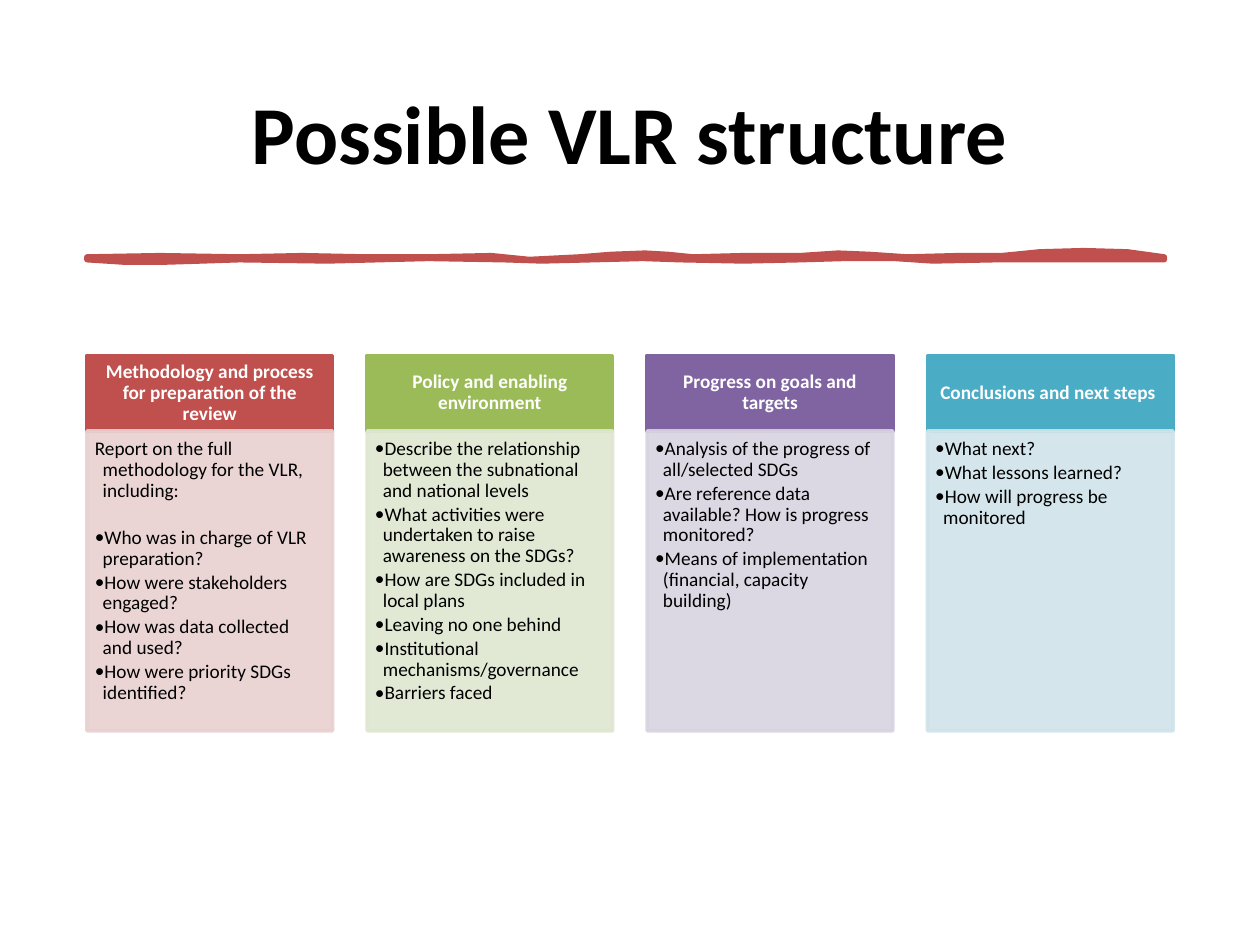
from dataclasses import dataclass

from lxml.etree import SubElement
from pptx import Presentation
from pptx.dml.color import RGBColor
from pptx.enum.shapes import MSO_SHAPE
from pptx.enum.text import MSO_ANCHOR, PP_ALIGN
from pptx.oxml.ns import qn
from pptx.util import Inches, Pt


@dataclass(frozen=True)
class Theme:
    font: str = "Calibri"
    title: int = 47
    text: int = 11
    black: str = "000000"
    white: str = "FFFFFF"
    red: str = "C0504D"
    green: str = "9BBB59"
    violet: str = "8064A2"
    blue: str = "4BACC6"
    pale_red: str = "E8D0D0"
    pale_green: str = "DEE7D1"
    pale_violet: str = "D8D3E0"
    pale_blue: str = "D0E3EA"


theme = Theme()


def paint(shape, color, width, alpha=100):
    """Give fill and line one colour, with alpha as percent opacity."""
    shape.shadow.inherit = False
    shape.fill.solid()
    shape.fill.fore_color.rgb = RGBColor.from_string(color)
    shape.line.color.rgb = RGBColor.from_string(color)
    shape.line.width = Pt(width)
    if alpha < 100:
        for tint in shape._element.spPr.iter(qn("a:srgbClr")):
            SubElement(tint, qn("a:alpha"), val=str(alpha * 1000))


def write(shape, lines, size=theme.text, color=theme.black, bold=False,
          align=PP_ALIGN.CENTER, anchor=MSO_ANCHOR.MIDDLE,
          inset=(0.09, 0.05, 0.09, 0.05), after=0, hang=0, bullets=False):
    """Fill a shape with paragraphs; a line ending in a colon is a lead-in."""
    frame = shape.text_frame
    frame.word_wrap = True
    frame.vertical_anchor = anchor
    (frame.margin_left, frame.margin_top,
     frame.margin_right, frame.margin_bottom) = map(Inches, inset)
    for i, line in enumerate(lines):
        para = frame.paragraphs[0] if i == 0 else frame.add_paragraph()
        lead = line.endswith(":")
        para.alignment = align
        para.line_spacing = 0.9
        para.space_after = Pt(15.2 if lead else after)
        props = para._p.get_or_add_pPr()
        if hang:
            para.level = 1
            props.set("marL", str(Inches(hang)))
            props.set("indent", str(-Inches(hang)))
        if bullets and not lead:
            SubElement(props, qn("a:buFont"), typeface=theme.font)
            SubElement(props, qn("a:buChar"), char="•")
        run = para.add_run()
        run.text = line
        run.font.name = theme.font
        run.font.size = Pt(size)
        run.font.bold = bold
        run.font.color.rgb = RGBColor.from_string(color)


deck = Presentation()
deck.slide_width, deck.slide_height = Inches(10), Inches(7.5)
slide = deck.slides.add_slide(deck.slide_layouts[6])
shapes = slide.shapes

left, span = 0.69, 8.62
title = shapes.add_textbox(Inches(left), Inches(0.37), Inches(span), Inches(1.45))
write(title, ["Possible VLR structure"], size=theme.title, bold=True)

# Hand-drawn rule: upper edge left to right, then lower edge back
upper = [(0.69, 2.04), (1.27, 2.03), (1.9, 2.04), (2.4, 2.03), (2.9, 2.04),
         (3.4, 2.04), (3.9, 2.03), (4.2, 2.06), (4.6, 2.04), (4.85, 2.02),
         (5.12, 2.01), (5.3, 2.02), (5.5, 2.04), (5.9, 2.03), (6.35, 2.03),
         (6.65, 2.01), (6.9, 2.02), (7.2, 2.04), (7.6, 2.03), (7.95, 2.03),
         (8.25, 2.0), (8.6, 1.99), (8.95, 2.0), (9.24, 2.04)]
lower = [(9.24, 2.06), (8.8, 2.06), (7.9, 2.06), (7.4, 2.07), (7.1, 2.05),
         (6.7, 2.05), (6.35, 2.06), (5.9, 2.07), (5.4, 2.06), (5.1, 2.05),
         (4.7, 2.06), (4.3, 2.07), (4.0, 2.06), (3.4, 2.05), (2.6, 2.07),
         (1.9, 2.06), (1.6, 2.07), (1.27, 2.08), (1.0, 2.08), (0.69, 2.06)]
points = [(Inches(x), Inches(y)) for x, y in upper + lower]
path = shapes.build_freeform(*points[0])
path.add_line_segments(points[1:], close=True)
paint(path.convert_to_shape(), theme.red, 3.25)

columns = [
    ("Methodology and process for preparation of the review",
     theme.red, theme.pale_red,
     ["Report on the full methodology for the VLR, including:",
      "Who was in charge of VLR preparation?",
      "How were stakeholders engaged?",
      "How was data collected and used?",
      "How were priority SDGs identified?"]),
    ("Policy and enabling environment", theme.green, theme.pale_green,
     ["Describe the relationship between the subnational and national levels",
      "What activities were undertaken to raise awareness on the SDGs?",
      "How are SDGs included in local plans",
      "Leaving no one behind",
      "Institutional mechanisms/governance",
      "Barriers faced"]),
    ("Progress on goals and targets", theme.violet, theme.pale_violet,
     ["Analysis of the progress of all/selected SDGs",
      "Are reference data available? How is progress monitored?",
      "Means of implementation (financial, capacity building)"]),
    ("Conclusions and next steps ", theme.blue, theme.pale_blue,
     ["What next?",
      "What lessons learned?",
      "How will progress be monitored"]),
]
top, width, head_height, body_height = 2.82, 1.95, 0.6, 2.38
pitch = (span - width) / (len(columns) - 1)
pad = 1 / 16

for i, (heading, strong, pale, items) in enumerate(columns):
    x = Inches(left + i * pitch)
    head = shapes.add_shape(MSO_SHAPE.RECTANGLE, x, Inches(top),
                            Inches(width), Inches(head_height))
    paint(head, strong, 2)
    write(head, [heading], color=theme.white, bold=True)
    body = shapes.add_shape(MSO_SHAPE.RECTANGLE, x, Inches(top + head_height),
                            Inches(width), Inches(body_height))
    paint(body, pale, 2, alpha=90)
    write(body, items, align=PP_ALIGN.LEFT, anchor=MSO_ANCHOR.TOP,
          inset=(pad, pad, 0.09, 0.1), after=1.8, hang=pad, bullets=True)

deck.save("out.pptx")
